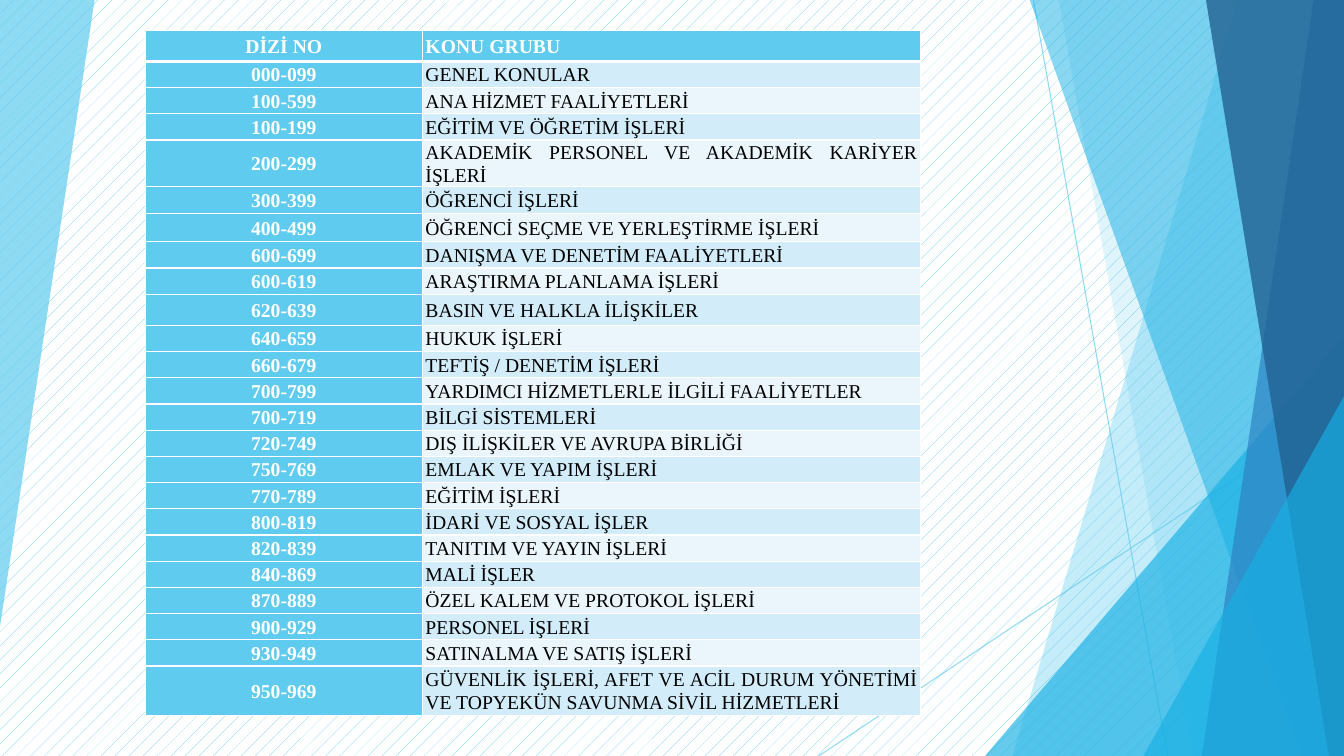
from dataclasses import dataclass

from lxml import etree
from pptx import Presentation
from pptx.dml.color import RGBColor
from pptx.enum.dml import MSO_PATTERN
from pptx.enum.shapes import MSO_CONNECTOR, MSO_SHAPE
from pptx.enum.text import MSO_ANCHOR, PP_ALIGN
from pptx.oxml.ns import qn
from pptx.util import Inches, Pt

DOTS = MSO_PATTERN.PERCENT_5
STRAIGHT = MSO_CONNECTOR.STRAIGHT
TRIANGLE = MSO_SHAPE.ISOSCELES_TRIANGLE
MIDDLE = MSO_ANCHOR.MIDDLE
CENTER, JUSTIFY = PP_ALIGN.CENTER, PP_ALIGN.JUSTIFY


@dataclass(frozen=True)
class Theme:
    sky: str = "5FCBEF"
    cyan: str = "17B0E4"
    blue: str = "2E83C3"
    navy: str = "226292"
    white: str = "FFFFFF"
    black: str = "000000"
    bands: tuple = ("D2ECF9", "EAF6FC")
    font: str = "Times New Roman"
    size: float = 14
    thin: float = 1
    thick: float = 3
    hairline: float = 0.75


THEME = Theme()
WIDTH, HEIGHT = 13.33, 7.5
TOP = -0.01
COLUMN_WIDTHS = (2.75, 4.94)
ROW_HEIGHT = 0.26
SPECIAL_HEIGHTS = {0: 0.31, 4: 0.29, 5: 0.27, 6: 0.28, 9: 0.31, 23: 0.49}

ROWS = (
    ("DİZİ NO", "KONU GRUBU"),
    ("000-099", "GENEL KONULAR"),
    ("100-599", "ANA HİZMET FAALİYETLERİ"),
    ("100-199", "EĞİTİM VE ÖĞRETİM İŞLERİ"),
    ("200-299", "AKADEMİK PERSONEL VE AKADEMİK KARİYER İŞLERİ"),
    ("300-399", "ÖĞRENCİ İŞLERİ"),
    ("400-499", "ÖĞRENCİ SEÇME VE YERLEŞTİRME İŞLERİ"),
    ("600-699", "DANIŞMA VE DENETİM FAALİYETLERİ"),
    ("600-619", "ARAŞTIRMA PLANLAMA İŞLERİ"),
    ("620-639", "BASIN VE HALKLA İLİŞKİLER"),
    ("640-659", "HUKUK İŞLERİ"),
    ("660-679", "TEFTİŞ / DENETİM İŞLERİ"),
    ("700-799", "YARDIMCI HİZMETLERLE İLGİLİ FAALİYETLER"),
    ("700-719", "BİLGİ SİSTEMLERİ"),
    ("720-749", "DIŞ İLİŞKİLER VE AVRUPA BİRLİĞİ"),
    ("750-769", "EMLAK VE YAPIM İŞLERİ"),
    ("770-789", "EĞİTİM İŞLERİ"),
    ("800-819", "İDARİ VE SOSYAL İŞLER"),
    ("820-839", "TANITIM VE YAYIN İŞLERİ"),
    ("840-869", "MALİ İŞLER"),
    ("870-889", "ÖZEL KALEM VE PROTOKOL İŞLERİ"),
    ("900-929", "PERSONEL İŞLERİ"),
    ("930-949", "SATINALMA VE SATIŞ İŞLERİ"),
    ("950-969", "GÜVENLİK İŞLERİ, AFET VE ACİL DURUM YÖNETİMİ VE TOPYEKÜN SAVUNMA SİVİL HİZMETLERİ"),
)


def paint(fill, color):
    fill.solid()
    fill.fore_color.rgb = RGBColor.from_string(color)


def set_opacity(element, percent):
    """Add an alpha value to the first colour inside the element."""
    color = next(element.iter(qn("a:srgbClr")))
    etree.SubElement(color, qn("a:alpha"), val=str(percent * 1000))


def finish_shape(shape, color, opacity):
    shape.shadow.inherit = False
    paint(shape.fill, color)
    shape.line.fill.background()
    set_opacity(shape.fill._xPr, opacity)


def add_facet(page, points, color, opacity):
    corners = [(Inches(x), Inches(y)) for x, y in points]
    builder = page.shapes.build_freeform(*corners[0], scale=1.0)
    builder.add_line_segments(corners[1:], close=True)
    finish_shape(builder.convert_to_shape(), color, opacity)


def add_right_facet(page, top_x, bottom_x, color, opacity, bottom_right=WIDTH):
    """Add a facet that reaches from a slanted left edge to the slide's right edge."""
    points = [(top_x, TOP), (WIDTH, TOP), (bottom_right, HEIGHT), (bottom_x, HEIGHT)]
    add_facet(page, points, color, opacity)


def add_corner_triangle(page, left, top, color, opacity):
    """Add a triangle that fills the bottom right corner of the slide."""
    shape = page.shapes.add_shape(TRIANGLE, Inches(left), Inches(top),
                                  Inches(WIDTH - left), Inches(HEIGHT - top))
    shape.adjustments[0] = 1
    finish_shape(shape, color, opacity)


def add_ray(page, start, end):
    ray = page.shapes.add_connector(STRAIGHT, *map(Inches, start + end))
    paint(ray.line.fill, THEME.sky)
    ray.line.width = Pt(THEME.hairline)
    properties = ray._element.spPr
    set_opacity(properties, 70)
    etree.SubElement(properties, qn("a:effectLst"))


def add_decoration(page):
    add_facet(page, [(0, TOP), (0.94, TOP), (0, 6.22)], THEME.sky, 70)
    add_ray(page, (10.25, 0), (11.58, HEIGHT))
    add_ray(page, (WIDTH, 4.03), (8.12, HEIGHT))
    add_right_facet(page, 12.28, 10.04, THEME.sky, 36)
    add_right_facet(page, 10.5, 11.83, THEME.sky, 20)
    add_corner_triangle(page, 9.77, 3.33, THEME.cyan, 66)
    add_right_facet(page, 10.21, 12.91, THEME.cyan, 50)
    add_right_facet(page, 13.03, 11.92, THEME.blue, 70)
    add_right_facet(page, 11.96, 13.18, THEME.navy, 80)
    add_corner_triangle(page, 11.34, 3.93, THEME.cyan, 66)


def set_borders(cell, top, bottom):
    properties = cell._tc.get_or_add_tcPr()
    widths = {"L": THEME.thin, "R": THEME.thin, "T": top, "B": bottom}
    for side, width in widths.items():
        line = etree.SubElement(properties, qn(f"a:ln{side}"), w=str(Pt(width)))
        fill = etree.SubElement(line, qn("a:solidFill"))
        etree.SubElement(fill, qn("a:srgbClr"), val=THEME.white)


def write_cell(cell, text, *, fill, color, bold, align):
    cell.margin_left = cell.margin_right = Inches(0.03)
    cell.margin_top = cell.margin_bottom = 0
    cell.vertical_anchor = MIDDLE
    paint(cell.fill, fill)
    para = cell.text_frame.paragraphs[0]
    para.alignment = align
    para.line_spacing = 1.07
    para.space_after = Pt(8)
    span = para.add_run()
    span.text = text
    span.font.name = THEME.font
    span.font.size = Pt(THEME.size)
    span.font.bold = bold
    span.font.color.rgb = RGBColor.from_string(color)


def add_subject_table(page):
    heights = [SPECIAL_HEIGHTS.get(index, ROW_HEIGHT) for index in range(len(ROWS))]
    frame = page.shapes.add_table(len(ROWS), len(COLUMN_WIDTHS), Inches(1.44), Inches(0.3),
                                  Inches(sum(COLUMN_WIDTHS)), Inches(sum(heights)))
    table = frame.table
    for column, width in zip(table.columns, COLUMN_WIDTHS):
        column.width = Inches(width)
    for index, (texts, height) in enumerate(zip(ROWS, heights)):
        table.rows[index].height = Inches(height)
        top = THEME.thick if index == 1 else THEME.thin
        bottom = THEME.thick if index == 0 else THEME.thin
        for position, text in enumerate(texts):
            cell = table.cell(index, position)
            heading = index == 0 or position == 0
            set_borders(cell, top, bottom)
            write_cell(cell, text,
                       fill=THEME.sky if heading else THEME.bands[(index - 1) % 2],
                       color=THEME.white if heading else THEME.black,
                       bold=heading,
                       align=JUSTIFY if position else CENTER)


def main():
    deck = Presentation()
    deck.slide_width, deck.slide_height = Inches(WIDTH), Inches(HEIGHT)
    page = deck.slides.add_slide(deck.slide_layouts[6])
    background = page.background.fill
    background.patterned()
    background.pattern = DOTS
    background.fore_color.rgb = RGBColor.from_string(THEME.sky)
    background.back_color.rgb = RGBColor.from_string(THEME.white)
    add_decoration(page)
    add_subject_table(page)
    deck.save("out.pptx")


if __name__ == "__main__":
    main()
